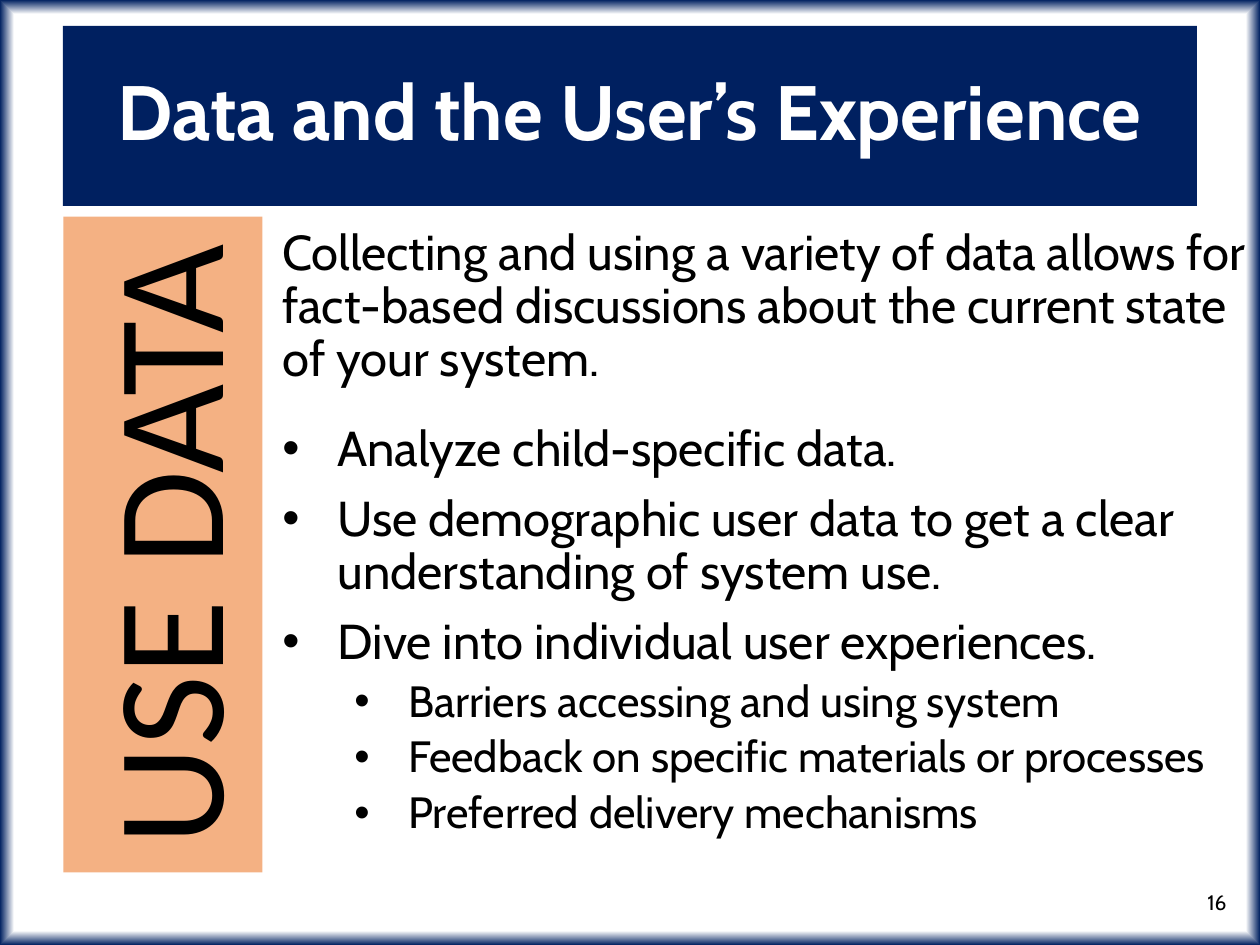
"""Build the slide on data and the user's experience."""
import dataclasses

import lxml.etree
import pptx
import pptx.dml.color
import pptx.enum.shapes
import pptx.enum.text
import pptx.oxml.ns
import pptx.util

ALIGN = pptx.enum.text.PP_ALIGN
ANCHOR = pptx.enum.text.MSO_ANCHOR
qn = pptx.oxml.ns.qn


@dataclasses.dataclass(frozen=True)
class Theme:
    navy: str = "002060"
    peach: str = "F4B183"
    white: str = "FFFFFF"
    black: str = "000000"
    font: str = "Cabin"
    banner_font: str = "Calibri"
    title_size: int = 44
    banner_size: int = 88
    body_size: int = 28
    detail_size: int = 25
    number_size: int = 12


def px(length):
    return pptx.util.Emu(round(length * 914400 / 126))


def rgb(value):
    return pptx.dml.color.RGBColor.from_string(value)


def write(paragraph, text, *, font, size, color, bold=False, align=ALIGN.LEFT,
          line=1.0, before=0, level=0, indent=0, hanging=0):
    paragraph.level = level
    paragraph.alignment = align
    paragraph.line_spacing = line
    paragraph.space_before = pptx.util.Pt(before)
    if hanging:
        properties = paragraph._p.get_or_add_pPr()
        properties.set("marL", str(px(indent)))
        properties.set("indent", str(-px(hanging)))
        lxml.etree.SubElement(properties, qn("a:buFont"), typeface="Arial")
        lxml.etree.SubElement(properties, qn("a:buChar"), char="•")
    run = paragraph.add_run()
    run.text = text
    run.font.name = font
    run.font.size = pptx.util.Pt(size)
    run.font.bold = bold
    run.font.color.rgb = rgb(color)


class Deck:
    def __init__(self, theme):
        self.theme = theme
        self.presentation = pptx.Presentation()
        self.presentation.slide_width = px(1260)
        self.presentation.slide_height = px(945)
        self.slide = self.presentation.slides.add_slide(self.presentation.slide_layouts[6])

    def glow_edge(self, inner, outer, start):
        fill = self.slide.background.fill
        fill.gradient()
        for stop, color, position in zip(fill.gradient_stops, (inner, outer), (start, 1)):
            stop.color.rgb = rgb(color)
            stop.position = position
        gradient = self.slide.element.find(".//" + qn("a:gradFill"))
        linear = gradient.find(qn("a:lin"))
        shading = lxml.etree.Element(qn("a:path"), path="shape")
        lxml.etree.SubElement(shading, qn("a:fillToRect"),
                              dict.fromkeys("ltrb", "50000"))
        gradient.replace(linear, shading)

    def panel(self, text, box, fill, *, anchor, rotation=0, **style):
        panel = self.slide.shapes.add_shape(
            pptx.enum.shapes.MSO_SHAPE.RECTANGLE, *map(px, box))
        panel.shadow.inherit = False
        panel.fill.solid()
        panel.fill.fore_color.rgb = rgb(fill)
        panel.line.fill.background()
        panel.rotation = rotation
        panel.text_frame.word_wrap = True
        panel.text_frame.vertical_anchor = anchor
        write(panel.text_frame.paragraphs[0], text, align=ALIGN.CENTER, **style)

    def text(self, entries, box, *, anchor=ANCHOR.TOP, **style):
        frame = self.slide.shapes.add_textbox(*map(px, box)).text_frame
        frame.word_wrap = True
        frame.vertical_anchor = anchor
        for index, (text, changes) in enumerate(entries):
            paragraph = frame.add_paragraph() if index else frame.paragraphs[0]
            write(paragraph, text, **{**style, **changes})


def main():
    theme = Theme()
    deck = Deck(theme)
    deck.glow_edge(theme.white, theme.navy, 0.97)
    deck.panel("Data and the User’s Experience", (63, 26, 1134, 180), theme.navy,
               anchor=ANCHOR.MIDDLE, font=theme.font, size=theme.title_size,
               color=theme.white, bold=True, line=0.9)
    deck.text([("16", {})], (955, 877, 284, 50), anchor=ANCHOR.MIDDLE, align=ALIGN.RIGHT,
              font=theme.font, size=theme.number_size, color=theme.black)

    action = dict(before=10, indent=55, hanging=55)
    first_action = {**action, "before": 21}
    detail = dict(before=5, level=1, indent=126, hanging=54, size=theme.detail_size)
    deck.text([
        ("Collecting and using a variety of data allows for fact-based discussions "
         "about the current state of your system.", {}),
        ("Analyze child-specific data.", first_action),
        ("Use demographic user data to get a clear understanding of system use.", action),
        ("Dive into individual user experiences.", action),
        ("Barriers accessing and using system", detail),
        ("Feedback on specific materials or processes", detail),
        ("Preferred delivery mechanisms", detail),
    ], (270, 222, 990, 697), font=theme.font, size=theme.body_size,
        color=theme.black, line=0.9)

    deck.panel("USE DATA", (-165, 445, 656, 199), theme.peach, anchor=ANCHOR.TOP,
               rotation=270, font=theme.banner_font, size=theme.banner_size,
               color=theme.black)
    deck.presentation.save("out.pptx")


if __name__ == "__main__":
    main()
